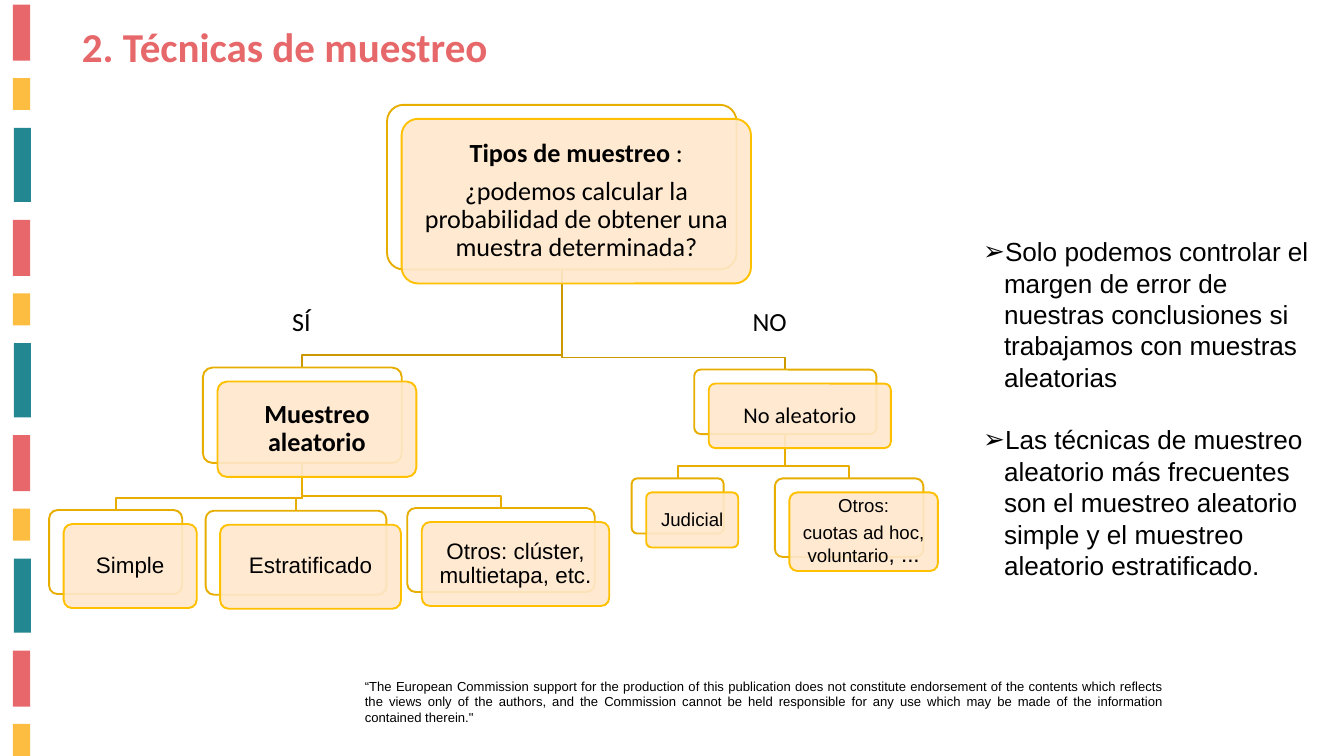
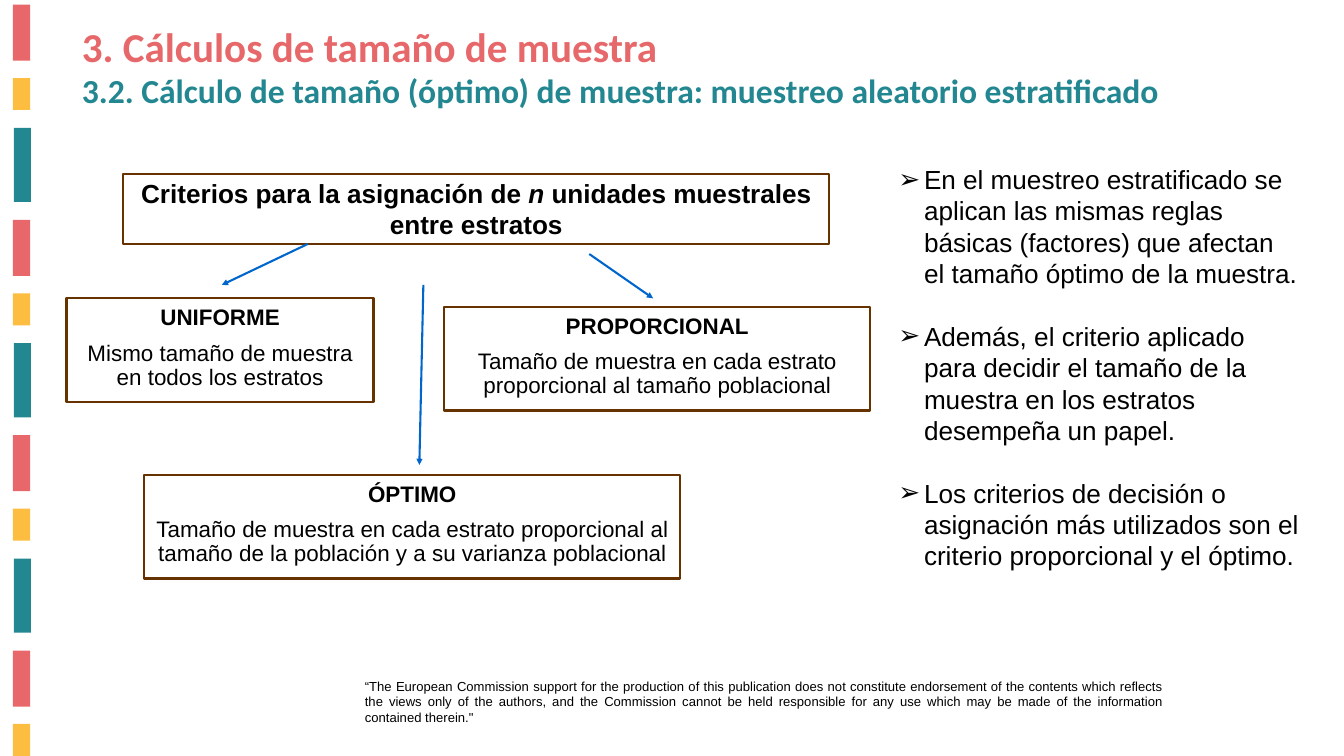
from dataclasses import dataclass

from lxml import etree
from pptx import Presentation
from pptx.dml.color import RGBColor
from pptx.enum import shapes, text
from pptx.oxml.ns import qn
from pptx.util import Pt


@dataclass(frozen=True)
class Theme:
    red: str = "E8676A"
    title: str = "E7686A"
    gold: str = "FDBD40"
    teal: str = "238791"
    ink: str = "000000"
    white: str = "FFFFFF"
    cream: str = "FFE8CC"
    edge: str = "FFC000"
    back: str = "E7AE00"
    trunk: str = "CC9A00"
    brown: str = "663300"
    blue: str = "0066CC"
    sans: str = "Arial"
    head: str = "Calibri"
    h1: int = 44
    h2: int = 36
    big: int = 28
    mid: int = 24
    small: int = 20
    note: int = 14


T = Theme()
LEFT, MID, JUST = text.PP_ALIGN.LEFT, text.PP_ALIGN.CENTER, text.PP_ALIGN.JUSTIFY
TOP, CENTRE = text.MSO_ANCHOR.TOP, text.MSO_ANCHOR.MIDDLE
RECT, ROUND = shapes.MSO_SHAPE.RECTANGLE, shapes.MSO_SHAPE.ROUNDED_RECTANGLE

NOTICE = (
    "“The European Commission support for the production of this publication does "
    "not constitute endorsement of the contents which reflects the views only of the "
    "authors, and the Commission cannot be held responsible for any use which may be "
    "made of the information contained therein.\""
)


def rgb(code):
    return RGBColor.from_string(code)


def pts(*values):
    return [Pt(v) for v in values]


def write(frame, paras, size, font=T.sans, color=T.ink, align=LEFT, anchor=TOP,
          inset=(7.2, 3.6), lead=1.0, gap=0):
    """Fill a frame; each paragraph is a list of (words, flags[, size]) runs."""
    frame.word_wrap = True
    frame.auto_size = text.MSO_AUTO_SIZE.NONE
    frame.vertical_anchor = anchor
    frame.margin_left = frame.margin_right = Pt(inset[0])
    frame.margin_top = frame.margin_bottom = Pt(inset[1])
    for i, runs in enumerate(paras):
        para = frame.add_paragraph() if i else frame.paragraphs[0]
        para.alignment = align
        para.line_spacing = lead
        para.space_before = Pt(gap if i else 0)
        for words, flags, *own in runs:
            run = para.add_run()
            run.text = words
            run.font.name = font
            run.font.size = Pt(own[0] if own else size)
            run.font.bold = "b" in flags
            run.font.italic = "i" in flags
            run.font.color.rgb = rgb(color)


def label(slide, box, paras, size, **style):
    area = slide.shapes.add_textbox(*pts(*box))
    write(area.text_frame, paras, size, **style)


def block(slide, kind, box, fill=None, line=None, width=2):
    shape = slide.shapes.add_shape(kind, *pts(*box))
    shape.shadow.inherit = False
    if fill:
        shape.fill.solid()
        shape.fill.fore_color.rgb = rgb(fill)
    else:
        shape.fill.background()
    if line:
        shape.line.color.rgb = rgb(line)
        shape.line.width = Pt(width)
    else:
        shape.line.fill.background()
    return shape


def place(shape, box):
    shape.left, shape.top, shape.width, shape.height = pts(*box)


def bands(slide):
    """Red, gold and teal bars repeating down the left edge."""
    cycle = [(13.9, 4.9, 18.5, 60, T.red), (13.9, 83.6, 18.5, 34.2, T.gold),
             (15, 137, 18, 79.4, T.teal)]
    for i in range(11):
        turn, part = divmod(i, len(cycle))
        x, y, w, h, fill = cycle[part]
        block(slide, RECT, (x, y + turn * 230.7, w, h), fill)


def page(deck, title, width):
    slide = deck.slides.add_slide(deck.slide_layouts[1])
    bands(slide)
    label(slide, (383.8, 722.9, 869.8, 58.3), [[(NOTICE, "")]], T.note, align=JUST)
    place(slide.shapes.title, (80.6, 19.4, width, 60.5))
    write(slide.shapes.title.text_frame, [[(title, "b")]], T.h1,
          font=T.head, color=T.title)
    return slide


def points(slide, box, items, indent):
    body = slide.placeholders[1]
    place(body, box)
    write(body.text_frame, [[(item, "")] for item in items], T.big, gap=33.5)
    for para in body.text_frame.paragraphs:
        props = para._p.get_or_add_pPr()
        props.set("marL", str(Pt(indent)))
        props.set("indent", str(-Pt(indent)))
        tint = etree.SubElement(props, qn("a:buClr"))
        etree.SubElement(tint, qn("a:srgbClr"), val=T.ink)
        etree.SubElement(props, qn("a:buFont"), typeface=T.sans)
        etree.SubElement(props, qn("a:buChar"), char="➢")


def branch(slide, start, end, color):
    """Elbow from the foot of one box to the top of another."""
    (x1, y1, w1, h1), (x2, y2, w2, _) = start, end
    x1, y1, x2 = x1 + w1 / 2, y1 + h1, x2 + w2 / 2
    bend = y2 - 13
    pen = slide.shapes.build_freeform(*pts(x1, y1))
    pen.add_line_segments([pts(x1, bend), pts(x2, bend), pts(x2, y2)], close=False)
    elbow = pen.convert_to_shape()
    elbow.shadow.inherit = False
    elbow.fill.background()
    elbow.line.color.rgb = rgb(color)
    elbow.line.width = Pt(2)


def card(slide, box, paras, size, font):
    """White box with a translucent cream box set off in front of it."""
    x, y, w, h = box
    rear = block(slide, ROUND, box, T.white, T.back)
    front = block(slide, ROUND, (x + 15.6, y + 15, w, h), T.cream, T.edge)
    for shape in (rear, front):
        shape.adjustments[0] = 0.1
    tint = front.fill._xPr.find(qn("a:solidFill"))[0]
    etree.SubElement(tint, qn("a:alpha"), val="90000")
    write(front.text_frame, paras, size, font=font, align=MID, anchor=CENTRE,
          inset=(size * 0.3, size * 0.3), lead=0.9, gap=size * 0.35)


def tree(slide, left, top):
    nodes = {
        "types": (None, (362.1, 0, 374.4, 176.4), T.big, T.head, [
            [("Tipos de muestreo ", "b"), (":", "")],
            [("¿podemos calcular la probabilidad de obtener una muestra "
              "determinada?", "")]]),
        "random": ("types", (164.8, 281.5, 213.1, 102.2), T.big, T.head,
                   [[("Muestreo aleatorio", "b")]]),
        "simple": ("random", (0, 434.2, 142.6, 90), T.mid, T.sans,
                   [[("Simple", "")]]),
        "strata": ("random", (167.7, 434.9, 193.7, 90), T.mid, T.sans,
                   [[("Estratificado", "")]]),
        "others": ("random", (383.7, 432, 200.9, 90), T.mid, T.sans,
                   [[("Otros: clúster, multietapa, etc.", "")]]),
        "fixed": ("types", (691.2, 283.7, 195.1, 69.1), T.mid, T.head,
                  [[("No aleatorio", "")]]),
        "judged": ("fixed", (624.2, 400.3, 98.6, 59), T.small, T.sans,
                   [[("Judicial", "")]]),
        "quotas": ("fixed", (777.6, 400.3, 159.1, 84.2), T.small, T.sans, [
            [("Otros:", "")],
            [("cuotas ad hoc, voluntario", ""), (", ...", "", T.mid)]]),
    }
    boxes = {name: (left + x, top + y, w, h)
             for name, (_, (x, y, w, h), *_) in nodes.items()}
    for name, (parent, *_) in nodes.items():
        if parent:
            color = T.trunk if parent == "types" else T.back
            branch(slide, boxes[parent], boxes[name], color)
    for name, (_, _, size, font, paras) in nodes.items():
        card(slide, boxes[name], paras, size, font)
    for words, x in (("SÍ", 253.4), ("NO", 746.6)):
        label(slide, (left + x, top + 211, 80, 41), [[(words, "")]], T.big,
              font=T.head)


def arrow(slide, x1, y1, x2, y2):
    line = slide.shapes.add_connector(shapes.MSO_CONNECTOR.STRAIGHT,
                                      *pts(x1, y1, x2, y2))
    line.line.color.rgb = rgb(T.blue)
    line.line.width = Pt(2.25)
    etree.SubElement(line.line._get_or_add_ln(), qn("a:tailEnd"), type="triangle")
    etree.SubElement(line._element.spPr, qn("a:effectLst"))


def criteria(slide, left, top):
    head = block(slide, RECT, (left + 60.5, top, 756.7, 74.9), None, T.brown, 2.25)
    write(head.text_frame, [[("Criterios para la asignación de ", "b"), ("n", "bi"),
                             (" unidades muestrales entre estratos", "b")]],
          T.big, align=MID)
    rules = [
        (0, 133.2, 329, "UNIFORME", "Mismo tamaño de muestra en todos los estratos"),
        (83.5, 322.5, 573.8, "ÓPTIMO",
         "Tamaño de muestra en cada estrato proporcional al tamaño de la población "
         "y a su varianza poblacional"),
        (404.6, 142.5, 456.5, "PROPORCIONAL",
         "Tamaño de muestra en cada estrato proporcional al tamaño poblacional"),
    ]
    for x, y, w, name, rule in rules:
        shape = block(slide, RECT, (left + x, top + y, w, 110.9), None, T.brown, 2.25)
        write(shape.text_frame, [[(name, "b")], [(rule, "")]], T.mid, align=MID,
              inset=(10.8, 8.6), lead=0.9, gap=12)
    for x1, y1, x2, y2 in [(258.5, 74.9, 166.3, 118.8), (382.3, 118.8, 378, 311.7),
                           (560.1, 85.7, 628.5, 133.2)]:
        arrow(slide, left + x1, top + y1, left + x2, top + y2)


def methods(deck):
    slide = page(deck, "2. Técnicas de muestreo", 487.4)
    tree(slide, 52.6, 112.3)
    points(slide, (1046.2, 248.8, 367.2, 448.9), [
        "Solo podemos controlar el margen de error de nuestras conclusiones si "
        "trabajamos con muestras aleatorias",
        "Las técnicas de muestreo aleatorio más frecuentes son el muestreo aleatorio "
        "simple y el muestreo aleatorio estratificado.",
    ], 22.3)


def sizes(deck):
    slide = page(deck, "3. Cálculos de tamaño de muestra", 781.2)
    label(slide, (80.6, 71.5, 1218, 69.6),
          [[("3.2. Cálculo de tamaño (óptimo) de muestra: muestreo aleatorio "
             "estratificado", "b")]], T.h2, font=T.head, color=T.teal)
    criteria(slide, 71.3, 186.5)
    points(slide, (955.4, 171.4, 442.8, 482.4), [
        "En el muestreo estratificado se aplican las mismas reglas básicas (factores) "
        "que afectan el tamaño óptimo de la muestra.",
        "Además, el criterio aplicado para decidir el tamaño de la muestra en los "
        "estratos desempeña un papel.",
        "Los criterios de decisión o asignación más utilizados son el criterio "
        "proporcional y el óptimo.",
    ], 27.4)


def main():
    deck = Presentation()
    deck.slide_width, deck.slide_height = pts(1440, 810)
    methods(deck)
    sizes(deck)
    deck.save("out.pptx")


if __name__ == "__main__":
    main()
